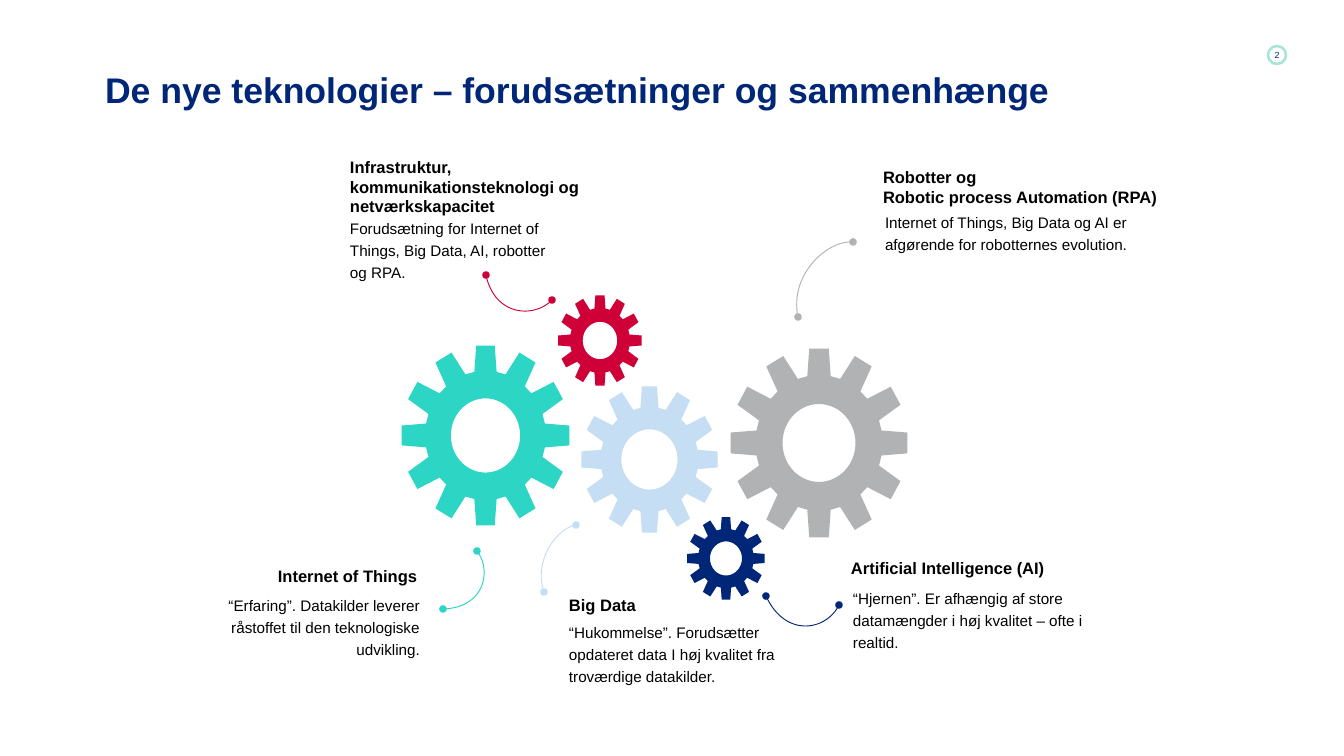
from math import cos, radians, sin

from lxml.etree import SubElement
from pptx import Presentation
from pptx.dml.color import RGBColor
from pptx.enum.shapes import MSO_SHAPE as Preset
from pptx.enum.text import MSO_ANCHOR as Anchor, MSO_AUTO_SIZE as AutoSize, PP_ALIGN as Align
from pptx.oxml.ns import qn
from pptx.util import Pt

PX = 9993  # EMU in one px
FONT = "Arial"
NAVY, TEAL, SKY, RED, GREY = "002677", "2CD5C4", "C5DEF3", "CE0037", "B1B2B4"
BLACK, MINT = "000000", "A7E6D7"

TEETH = 12
# Tooth outline: angle from the tooth's middle in degrees, share of the gear's radius
TOOTH = [(-10.6, 0.715), (-6.3, 1), (6.3, 1), (10.6, 0.715)]
HOLE = 0.41

# Gear box, colour, and the four curve points of its lead from the box's top left
GEARS = [
    ((401, 345, 169, 181), TEAL, [(42, 264), (84, 263), (91, 225), (76, 206)]),
    ((581, 386, 137, 147), SKY, [(-37, 206), (-48, 175), (-24, 142), (-5, 139)]),
    ((558, 295, 84, 91), RED, [(-72, -20), (-63, 22), (-23, 23), (-6, 5)]),
    ((687, 517, 78, 83), NAVY, [(79, 79), (99, 122), (140, 113), (152, 88)]),
    ((730, 348, 178, 190), GREY, [(68, -31), (59, -74), (98, -108), (123, -106)]),
]

# Heading box, heading, body offset, body width, body text, alignment
TOPICS = [
    ((214, 558, 203, 35), "Internet of Things", (-3, 35), 209,
     "“Erfaring”. Datakilder leverer råstoffet til den teknologiske udvikling.", Align.RIGHT),
    ((350, 169, 231, 35), "Infrastruktur, kommunikationsteknologi og netværkskapacitet", (0, 47), 209,
     "Forudsætning for Internet of Things, Big Data, AI, robotter og RPA.", Align.LEFT),
    ((883, 169, 301, 35), "Robotter og\nRobotic process Automation (RPA)", (2, 41), 251,
     "Internet of Things, Big Data og AI er afgørende for robotternes evolution.", Align.LEFT),
    ((851, 550, 203, 35), "Artificial Intelligence (AI)", (2, 36), 231,
     "“Hjernen”. Er afhængig af store datamængder i høj kvalitet – ofte i realtid.", Align.LEFT),
    ((569, 587, 203, 35), "Big Data", (0, 33), 209,
     "“Hukommelse”. Forudsætter opdateret data I høj kvalitet fra troværdige datakilder.", Align.LEFT),
]


def rgb(color):
    return RGBColor.from_string(color)


def emu(*lengths):
    return [round(length * PX) for length in lengths]


def write(frame, text, size, color=BLACK, bold=False, align=Align.LEFT,
          anchor=Anchor.TOP, spacing=None, inset=0):
    frame.word_wrap = True
    frame.auto_size = AutoSize.NONE
    frame.vertical_anchor = anchor
    frame.margin_left = frame.margin_right = emu(inset)[0]
    frame.margin_top = frame.margin_bottom = emu(inset // 2)[0]
    for index, line in enumerate(text.split("\n")):
        para = frame.add_paragraph() if index else frame.paragraphs[0]
        para.alignment = align
        if spacing:
            para.line_spacing = spacing
        span = para.add_run()
        span.text = line
        span.font.name, span.font.size, span.font.bold = FONT, Pt(size), bold
        span.font.color.rgb = rgb(color)


def add_title(page, box, text):
    title = page.shapes.title
    title.left, title.top, title.width, title.height = emu(*box)
    write(title.text_frame, text, 28, NAVY, bold=True, anchor=Anchor.MIDDLE, inset=9)


def add_page_number(page, box, number):
    ring = page.shapes.add_shape(Preset.OVAL, *emu(*box))
    ring.shadow.inherit = False
    ring.fill.background()
    ring.line.color.rgb = rgb(MINT)
    ring.line.width = Pt(2)
    write(ring.text_frame, number, 7, NAVY, align=Align.CENTER, anchor=Anchor.MIDDLE)
    ring.text_frame.word_wrap = False


def add_gear(page, box, color):
    left, top, width, height = box

    def point(angle, share):
        turn = radians(angle)
        return emu(left + width / 2 * (1 + share * cos(turn)),
                   top + height / 2 * (1 + share * sin(turn)))

    rim = [point(360 / TEETH * tooth + angle, share)
           for tooth in range(TEETH) for angle, share in TOOTH]
    hole = [point(-angle, HOLE) for angle in range(0, 360, 5)]
    outline = page.shapes.build_freeform(*rim[0], scale=1.0)
    outline.add_line_segments(rim[1:], close=True)
    outline.move_to(*hole[0])
    outline.add_line_segments(hole[1:], close=True)
    gear = outline.convert_to_shape()
    gear.shadow.inherit = False
    gear.fill.solid()
    gear.fill.fore_color.rgb = rgb(color)
    gear.line.fill.background()


def add_lead(page, box, color, controls, steps=32):
    left, top = box[:2]

    def point(t):
        weights = [(1 - t) ** 3, 3 * t * (1 - t) ** 2, 3 * t ** 2 * (1 - t), t ** 3]
        return emu(left + sum(w * x for w, (x, _) in zip(weights, controls)),
                   top + sum(w * y for w, (_, y) in zip(weights, controls)))

    curve = [point(step / steps) for step in range(steps + 1)]
    outline = page.shapes.build_freeform(*curve[0], scale=1.0)
    outline.add_line_segments(curve[1:], close=False)
    lead = outline.convert_to_shape()
    lead.shadow.inherit = False
    lead.fill.background()
    lead.line.color.rgb = rgb(color)
    lead.line.width = Pt(0.75)
    # Round dots at both ends
    stroke = lead.line._get_or_add_ln()
    for end in ("a:headEnd", "a:tailEnd"):
        SubElement(stroke, qn(end), type="oval")


def add_topic(page, box, heading, offset, body_width, body, align):
    left, top = box[:2]
    label = page.shapes.add_textbox(*emu(*box))
    write(label.text_frame, heading, 13, bold=True, align=align, anchor=Anchor.MIDDLE)
    note = page.shapes.add_textbox(*emu(left + offset[0], top + offset[1], body_width, 81))
    write(note.text_frame, body, 12, align=align, spacing=1.2)


def main():
    deck = Presentation()
    deck.slide_width, deck.slide_height = emu(1344, 756)
    page = deck.slides.add_slide(deck.slide_layouts[5])

    # Title and page number
    add_page_number(page, (1268, 46, 18, 18), "2")
    add_title(page, (96, 44, 1153, 91), "De nye teknologier – forudsætninger og sammenhænge")

    # Gears with their leads
    for box, color, controls in GEARS:
        add_gear(page, box, color)
        add_lead(page, box, color, controls)

    # Texts around the gears
    for topic in TOPICS:
        add_topic(page, *topic)

    deck.save("out.pptx")


if __name__ == "__main__":
    main()
